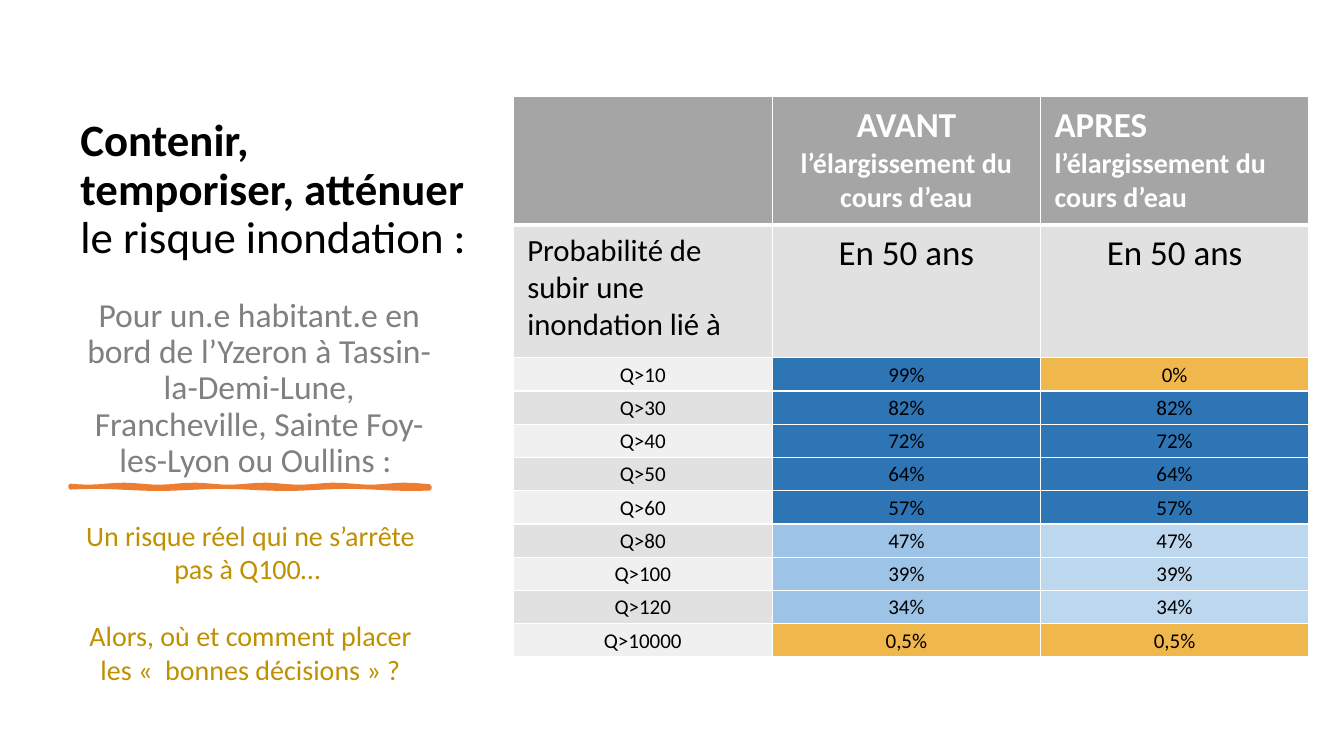
from math import sin

from lxml.etree import SubElement
from pptx import Presentation
from pptx.dml.color import RGBColor
from pptx.enum.text import MSO_ANCHOR, PP_ALIGN
from pptx.oxml.ns import qn
from pptx.util import Inches, Pt

FONT = "Calibri"
HEADER, BAND_DARK, BAND_LIGHT = "A5A5A5", "E1E1E1", "F0F0F0"
HIGH, MEDIUM_BEFORE, MEDIUM_AFTER, LOW = "2E75B6", "9DC3E6", "BDD7EE", "F0B74C"
RISKS = [
    ("Q>10", "99%", "0%"),
    ("Q>30", "82%", "82%"),
    ("Q>40", "72%", "72%"),
    ("Q>50", "64%", "64%"),
    ("Q>60", "57%", "57%"),
    ("Q>80", "47%", "47%"),
    ("Q>100", "39%", "39%"),
    ("Q>120", "34%", "34%"),
    ("Q>10000", "0,5%", "0,5%"),
]


def color(value):
    """Turn a hex string into a colour."""
    return RGBColor.from_string(value)


def write(paragraph, runs, tint, **formats):
    """Fill a paragraph with (text, size, bold) runs and format it."""
    for name, value in formats.items():
        setattr(paragraph, name, value)
    for text, size, bold in runs:
        run = paragraph.add_run()
        run.text = text
        for name, value in {"name": FONT, "size": Pt(size), "bold": bold}.items():
            setattr(run.font, name, value)
        run.font.color.rgb = color(tint)


def add_text(slide, box, paragraphs, tint, anchor=MSO_ANCHOR.TOP, **formats):
    """Place a wrapped text box holding one list of runs per paragraph."""
    frame = slide.shapes.add_textbox(*map(Inches, box)).text_frame
    frame.word_wrap = True
    frame.vertical_anchor = anchor
    for index, runs in enumerate(paragraphs):
        paragraph = frame.add_paragraph() if index else frame.paragraphs[0]
        write(paragraph, runs, tint, **formats)
    return frame


def add_brush_stroke(slide, box, tint):
    """Draw a hand-drawn underline as a thin wavy outline."""
    left, top, width, height = box
    steps = 40
    upper = [(left + width * i / steps, top + 0.01 * sin(i * 0.8)) for i in range(steps + 1)]
    lower = [(x, top + height + 0.01 * sin(x * 5)) for x, _ in reversed(upper)]
    points = [(Inches(x), Inches(y)) for x, y in upper + lower]
    builder = slide.shapes.build_freeform(*points[0])
    builder.add_line_segments(points[1:], close=True)
    shape = builder.convert_to_shape()
    shape.shadow.inherit = False
    shape.fill.solid()
    shape.fill.fore_color.rgb = color(tint)
    shape.line.color.rgb = color(tint)
    shape.line.width = Pt(3)


def style_cell(cell, fill, margins, anchor, widths):
    """Set a cell's white borders, fill, margins and anchor."""
    properties = cell._tc.get_or_add_tcPr()
    for side, width in zip("LRTB", widths):
        line = SubElement(properties, qn(f"a:ln{side}"), w=str(Pt(width)))
        line_fill = SubElement(line, qn("a:solidFill"))
        SubElement(line_fill, qn("a:srgbClr"), val="FFFFFF")
    cell.fill.solid()
    cell.fill.fore_color.rgb = color(fill)
    cell.vertical_anchor = anchor
    for side, margin in zip(("left", "top", "right", "bottom"), margins):
        setattr(cell, f"margin_{side}", Inches(margin))


def risk_fill(value, medium):
    """Choose a cell colour from its probability."""
    percent = float(value.rstrip("%").replace(",", "."))
    return HIGH if percent > 50 else medium if percent > 1 else LOW


def add_risk_table(slide, box):
    """Build the table of flood probabilities before and after widening."""
    table = slide.shapes.add_table(len(RISKS) + 2, 3, *map(Inches, box)).table
    for column, width in zip(table.columns, (2.57, 2.66, 2.66)):
        column.width = Inches(width)
    for row, height in zip(table.rows, [1.27, 1.32] + [0.33] * len(RISKS)):
        row.height = Inches(height)

    left, center = PP_ALIGN.LEFT, PP_ALIGN.CENTER
    widening = ("l’élargissement du cours d’eau", 20, True)
    period = ([("En 50 ans", 25, False)], center)
    headings = [
        [([], left), ([("AVANT ", 25, True), widening], center),
         ([("APRES ", 25, True), widening], left)],
        [([("Probabilité de subir une inondation lié à", 22, False)], left), period, period],
    ]
    looks = [(HEADER, "FFFFFF", (1, 1, 1, 3)), (BAND_DARK, "000000", (1, 1, 3, 1))]
    for row, (cells, (fill, tint, widths)) in enumerate(zip(headings, looks)):
        for column, (runs, alignment) in enumerate(cells):
            cell = table.cell(row, column)
            style_cell(cell, fill, (0.14, 0.07, 0.14, 0.07), MSO_ANCHOR.TOP, widths)
            write(cell.text_frame.paragraphs[0], runs, tint, alignment=alignment)

    for row, (flow, before, after) in enumerate(RISKS, start=2):
        fills = (BAND_DARK if row % 2 else BAND_LIGHT,
                 risk_fill(before, MEDIUM_BEFORE), risk_fill(after, MEDIUM_AFTER))
        for column, (text, fill) in enumerate(zip((flow, before, after), fills)):
            cell = table.cell(row, column)
            style_cell(cell, fill, (0.01, 0.01, 0.01, 0), MSO_ANCHOR.MIDDLE, (1, 1, 1, 1))
            write(cell.text_frame.paragraphs[0], [(text, 15, False)], "000000", alignment=center)


def add_message(slide, box):
    """Place the title, audience, underline and questions in the left column."""
    left, top, width, height = box
    add_text(slide, (left + 0.05, top, 4.03, 2.41),
             [[("Contenir, temporiser, atténuer ", 32, True), ("le risque inondation :", 32, False)]],
             "000000", MSO_ANCHOR.BOTTOM, line_spacing=0.9)
    audience = add_text(
        slide, (left, top + 2.66, width, 1.93),
        [[("Pour un.e habitant.e en bord de l’Yzeron à Tassin-la-Demi-Lune, "
           "Francheville, Sainte Foy-les-Lyon ou Oullins : ", 24, False)]],
        "808080", alignment=PP_ALIGN.CENTER, line_spacing=0.9)
    audience.margin_left = Inches(0.14)
    add_brush_stroke(slide, (left + 0.05, top + 4.57, 3.56, 0.02), "ED7D31")
    questions = add_text(
        slide, (left + 0.1, top + 4.84, 3.47, height - 4.84),
        [[("Un risque réel qui ne s’arrête pas à Q100… ", 20, False)],
         [("Alors, où et comment placer les «\u00a0 bonnes décisions\u00a0» ?", 20, False)]],
        "BF9000", alignment=PP_ALIGN.CENTER)
    questions.paragraphs[1].space_before = Pt(24)


def main():
    """Build and save the flood risk slide."""
    presentation = Presentation()
    presentation.slide_width = Inches(13.33)
    presentation.slide_height = Inches(7.5)
    slide = presentation.slides.add_slide(presentation.slide_layouts[6])
    add_message(slide, (0.65, 0.25, 3.8, 6.62))
    add_risk_table(slide, (5.09, 0.96, 7.89, 5.55))
    presentation.save("out.pptx")


if __name__ == "__main__":
    main()
